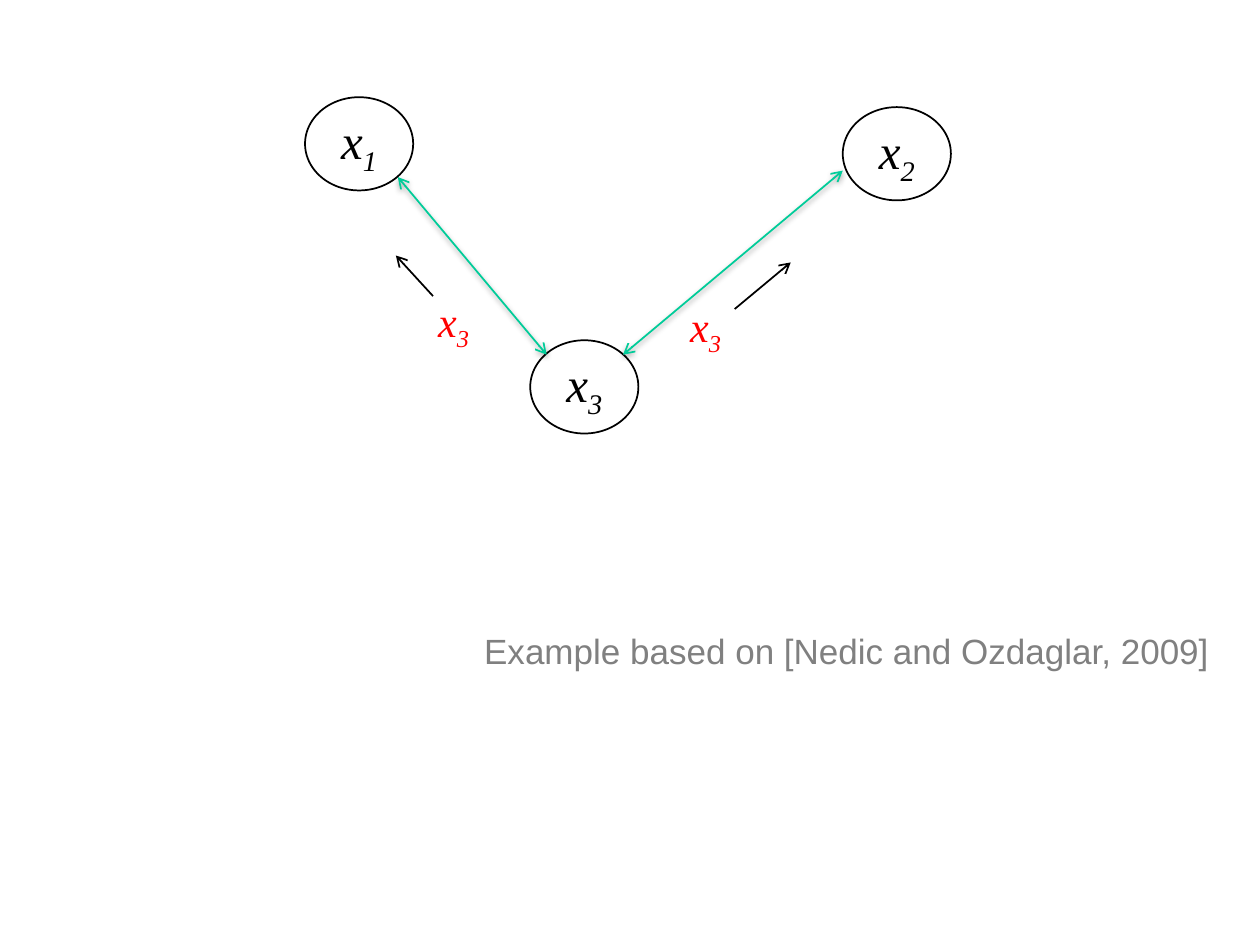
from lxml import etree
from pptx import Presentation
from pptx.dml.color import RGBColor
from pptx.enum.shapes import MSO_CONNECTOR, MSO_SHAPE
from pptx.enum.text import MSO_ANCHOR, PP_ALIGN
from pptx.oxml.ns import qn
from pptx.util import Cm, Pt

BLACK, WHITE, GREEN, RED, GRAY = "000000", "FFFFFF", "00CC99", "FF0000", "808080"


def color(value):
    return RGBColor.from_string(value)


def write(shape, text, subscript="", font="Times New Roman", size=24, fill=BLACK, italic=True, wrap=False):
    frame = shape.text_frame
    frame.word_wrap = wrap
    frame.vertical_anchor = MSO_ANCHOR.MIDDLE
    paragraph = frame.paragraphs[0]
    paragraph.alignment = PP_ALIGN.CENTER
    for part, baseline in ((text, None), (subscript, "-25000")):
        if not part:
            continue
        run = paragraph.add_run()
        run.text = part
        run.font.name = font
        run.font.size = Pt(size)
        run.font.italic = italic
        run.font.color.rgb = color(fill)
        if baseline:
            run.font._element.set("baseline", baseline)


presentation = Presentation()
presentation.slide_width = Cm(25.4)
presentation.slide_height = Cm(19.05)
slide = presentation.slides.add_slide(presentation.slide_layouts[6])

# Agents
for index, left, top in (("1", 6.15, 1.96), ("3", 10.69, 6.86), ("2", 16.99, 2.16)):
    agent = slide.shapes.add_shape(MSO_SHAPE.OVAL, Cm(left), Cm(top), Cm(2.18), Cm(1.88))
    agent.shadow.inherit = False
    agent.fill.solid()
    agent.fill.fore_color.rgb = color(WHITE)
    agent.line.color.rgb = color(BLACK)
    agent.line.width = Pt(1)
    write(agent, "x", index, size=28, wrap=True)

# Green two-way links with a soft shadow, black message arrows without one
arrows = (
    (8.02, 3.57, 11.02, 7.15, GREEN),
    (12.56, 7.15, 16.99, 3.44, GREEN),
    (14.81, 6.23, 15.94, 5.29, BLACK),
    (8.73, 5.97, 7.98, 5.15, BLACK),
)
for x1, y1, x2, y2, stroke in arrows:
    arrow = slide.shapes.add_connector(MSO_CONNECTOR.STRAIGHT, Cm(x1), Cm(y1), Cm(x2), Cm(y2))
    arrow.line.color.rgb = color(stroke)
    arrow.line.width = Pt(1)
    is_link = stroke == GREEN
    line = arrow.line._get_or_add_ln()
    for end in ("a:headEnd", "a:tailEnd") if is_link else ("a:tailEnd",):
        etree.SubElement(line, qn(end), type="arrow")
    effects = etree.SubElement(arrow._element.spPr, qn("a:effectLst"))
    if is_link:
        shadow = etree.SubElement(effects, qn("a:outerShdw"), blurRad="40000", dist="20000",
                                  dir="5400000", rotWithShape="0")
        shade = etree.SubElement(shadow, qn("a:srgbClr"), val=BLACK)
        etree.SubElement(shade, qn("a:alpha"), val="38000")

# Messages sent by agent 3
for left, top in ((8.56, 5.9), (13.64, 6)):
    message = slide.shapes.add_textbox(Cm(left), Cm(top), Cm(1.17), Cm(1.27))
    write(message, "x", "3", fill=RED)

# Credit line
credit = slide.shapes.add_textbox(Cm(9.45), Cm(12.48), Cm(15.24), Cm(1.27))
write(credit, "Example based on [Nedic and Ozdaglar, 2009]", font="Arial", size=20, fill=GRAY, italic=False)

presentation.save("out.pptx")
